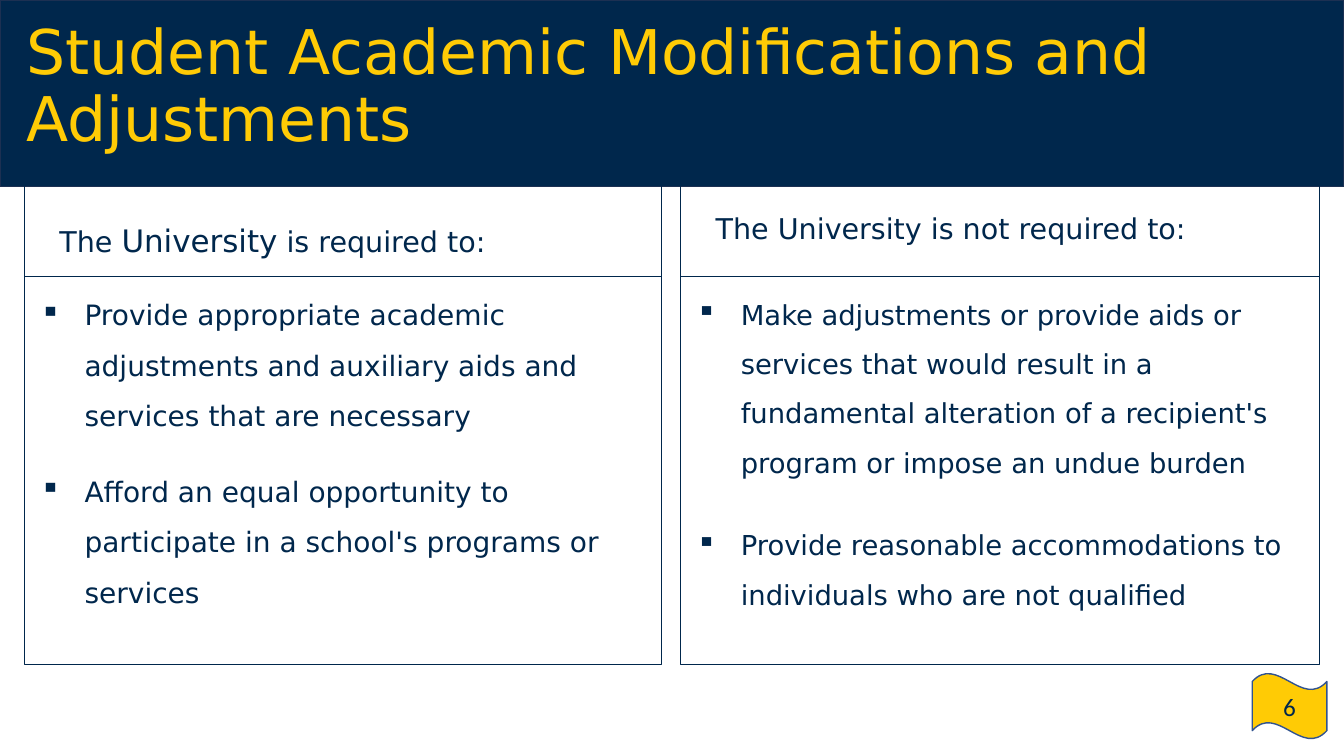
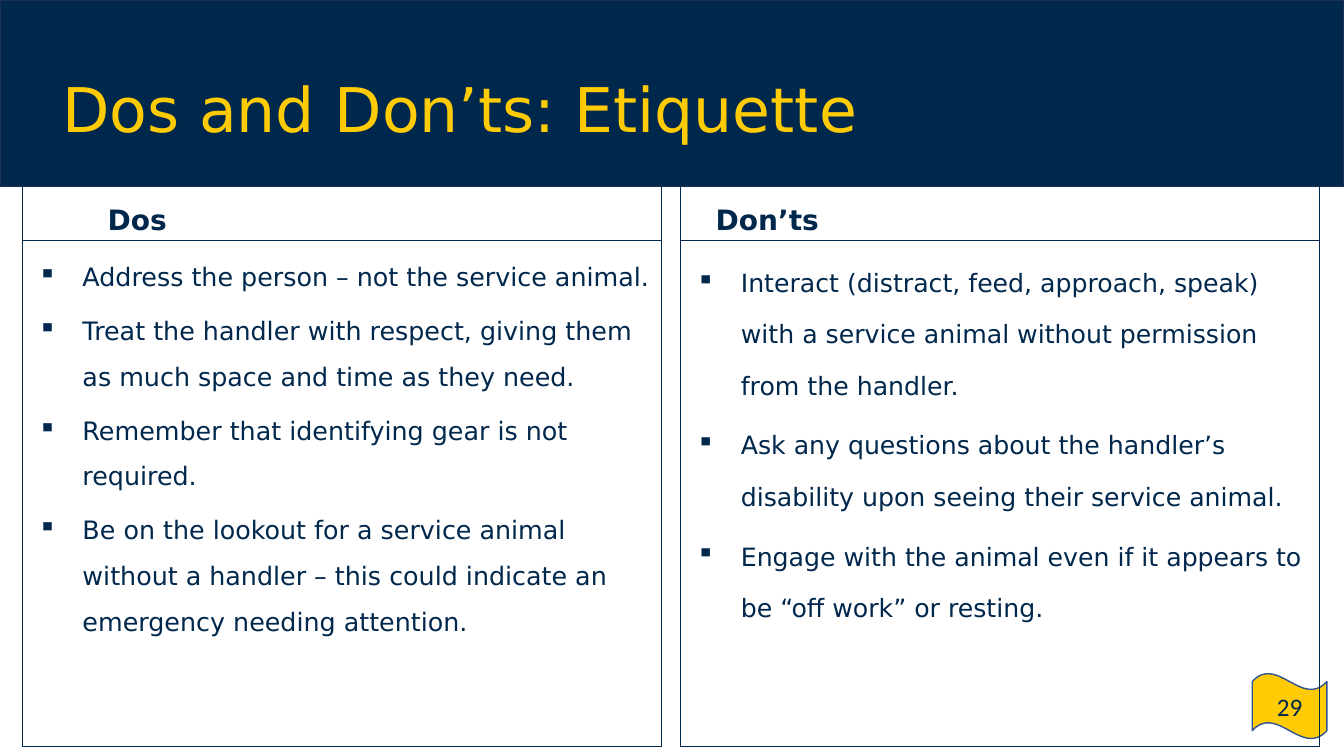
from lxml import etree
from pptx import Presentation
from pptx.dml.color import RGBColor
from pptx.enum.shapes import MSO_SHAPE
from pptx.enum.text import MSO_ANCHOR, MSO_AUTO_SIZE, PP_ALIGN
from pptx.oxml.ns import qn
from pptx.util import Inches, Pt

RECT, WAVE = MSO_SHAPE.RECTANGLE, MSO_SHAPE.WAVE
TOP, MIDDLE, BOTTOM = MSO_ANCHOR.TOP, MSO_ANCHOR.MIDDLE, MSO_ANCHOR.BOTTOM
LEFT, CENTER = PP_ALIGN.LEFT, PP_ALIGN.CENTER

NAVY = RGBColor(0x00, 0x27, 0x4C)
MAIZE = RGBColor(0xFF, 0xCB, 0x05)
BAND_EDGE = RGBColor(0x1C, 0x30, 0x52)
FLAG_EDGE = RGBColor(0x31, 0x53, 0x8F)
FONT, NUMBER_FONT = "DejaVu Sans", "Calibri"

SLIDE_W, SLIDE_H = 13.33, 7.5
BAND_H = 1.85
PANEL_TOP = 1.84
LEFT_END = 6.56
RIGHT_START, RIGHT_END = 6.75, 13.09
TITLE_H = 1.45
TITLE_ONLY = 5


def add_box(s, kind, box, fill, edge, width):
    shape = s.shapes.add_shape(kind, *map(Inches, box))
    shape.shadow.inherit = False
    if fill is None:
        shape.fill.background()
    else:
        shape.fill.solid()
        shape.fill.fore_color.rgb = fill
    shape.line.color.rgb = edge
    shape.line.width = Pt(width)
    shape.text_frame.word_wrap = True
    return shape


def style(p, size, color=NAVY, name=FONT, align=LEFT, spacing=1.0, before=0, after=0):
    p.font.size, p.font.name, p.font.color.rgb = Pt(size), name, color
    p.alignment, p.line_spacing = align, spacing
    p.space_before, p.space_after = Pt(before), Pt(after)


def set_indent(p, margin, first):
    pPr = p._p.get_or_add_pPr()
    pPr.set("marL", str(Inches(margin)))
    pPr.set("indent", str(Inches(first)))
    return pPr


def add_bullet(p):
    pPr = set_indent(p, 0.5, -0.44)
    color = etree.Element(qn("a:buClr"))
    etree.SubElement(color, qn("a:srgbClr"), val=str(NAVY))
    char = etree.Element(qn("a:buChar"), char="▪")
    # The schema wants bullet settings before the default run properties.
    pPr.find(qn("a:defRPr")).addprevious(color)
    color.addnext(char)


def add_slide(prs, title, title_box, number):
    """Add a slide with the title band and the page flag."""
    s = prs.slides.add_slide(prs.slide_layouts[TITLE_ONLY])
    heading = s.shapes.title
    heading.left, heading.top, heading.width, heading.height = map(Inches, title_box)
    tf = heading.text_frame
    tf.text = title
    tf.word_wrap, tf.auto_size, tf.vertical_anchor = True, MSO_AUTO_SIZE.NONE, MIDDLE
    style(tf.paragraphs[0], 44, MAIZE, spacing=0.9)

    band = add_box(s, RECT, (0, 0, SLIDE_W, BAND_H), NAVY, BAND_EDGE, 1)
    heading.element.addprevious(band.element)

    flag = add_box(s, WAVE, (12.42, 6.68, 0.74, 0.65), MAIZE, FLAG_EDGE, 1)
    flag.text_frame.text = str(number)
    style(flag.text_frame.paragraphs[0], 18, name=NUMBER_FONT, align=CENTER)
    return s


def add_header(s, box, runs, size, anchor, margin=0.5, spacing=1.0, bold=False):
    """Add a framed heading; runs holds (text, own size or None) pairs."""
    tf = add_box(s, RECT, box, None, NAVY, 0.75).text_frame
    tf.vertical_anchor = anchor
    p = tf.paragraphs[0]
    for text, own_size in runs:
        r = p.add_run()
        r.text = text
        if own_size:
            r.font.size = Pt(own_size)
    style(p, size, spacing=spacing, before=18)
    p.font.bold = bold
    set_indent(p, margin, -0.25)


def add_bullets(s, box, items, size, spacing, before=0, after=0):
    tf = add_box(s, RECT, box, None, NAVY, 0.75).text_frame
    tf.vertical_anchor = TOP
    for i, item in enumerate(items):
        p = tf.add_paragraph() if i else tf.paragraphs[0]
        p.text = item
        style(p, size, spacing=spacing, before=before, after=after)
        add_bullet(p)


def add_columns(s, left, header_h, body_h, columns):
    """Add two columns, each given as (header options, bullet options)."""
    spans = ((left, LEFT_END - left), (RIGHT_START, RIGHT_END - RIGHT_START))
    for (x, w), (header, bullets) in zip(spans, columns):
        add_header(s, (x, PANEL_TOP, w, header_h), **header)
        add_bullets(s, (x, PANEL_TOP + header_h, w, body_h), **bullets)


def add_adjustments(prs):
    s = add_slide(prs, "Student Academic Modifications and Adjustments",
                  (0.16, 0.15, 12.46, TITLE_H), 6)
    required = (
        dict(runs=[("The ", None), ("University", 22.1), (" is required to:", None)],
             size=20.4, anchor=MIDDLE, spacing=1.5),
        dict(items=[
            "Provide appropriate academic adjustments and auxiliary aids and "
            "services that are necessary",
            "Afford an equal opportunity to participate in a school's programs "
            "or services",
        ], size=20, spacing=1.5, before=18))
    not_required = (
        dict(runs=[("The University is not required to:", None)],
             size=20.4, anchor=MIDDLE, spacing=0.8),
        dict(items=[
            "Make adjustments or provide aids or services that would result in a "
            "fundamental alteration of a recipient's program or impose an undue burden",
            "Provide reasonable accommodations to individuals who are not qualified",
        ], size=19.6, spacing=1.5, before=18, after=6))
    add_columns(s, 0.24, 0.9, 3.85, (required, not_required))


def add_etiquette(prs):
    s = add_slide(prs, "Dos and Don’ts: Etiquette", (0.52, 0.39, 11.5, TITLE_H), 29)
    dos = (
        dict(runs=[("Dos", None)], size=20, anchor=BOTTOM, margin=1, bold=True),
        dict(items=[
            "Address the person – not the service animal.",
            "Treat the handler with respect, giving them as much space and time "
            "as they need.",
            "Remember that identifying gear is not required.",
            "Be on the lookout for a service animal without a handler – this could "
            "indicate an emergency needing attention.",
        ], size=18.1, spacing=1.5, after=6))
    donts = (
        dict(runs=[("Don’ts", None)], size=20, anchor=BOTTOM, bold=True),
        dict(items=[
            "Interact (distract, feed, approach, speak) with a service animal "
            "without permission from the handler.",
            "Ask any questions about the handler’s disability upon seeing their "
            "service animal.",
            "Engage with the animal even if it appears to be “off work” or resting.",
        ], size=18, spacing=1.7, after=6))
    add_columns(s, 0.22, 0.55, 5.02, (dos, donts))


def main():
    prs = Presentation()
    prs.slide_width, prs.slide_height = Inches(SLIDE_W), Inches(SLIDE_H)
    add_adjustments(prs)
    add_etiquette(prs)
    prs.save("out.pptx")


if __name__ == "__main__":
    main()
